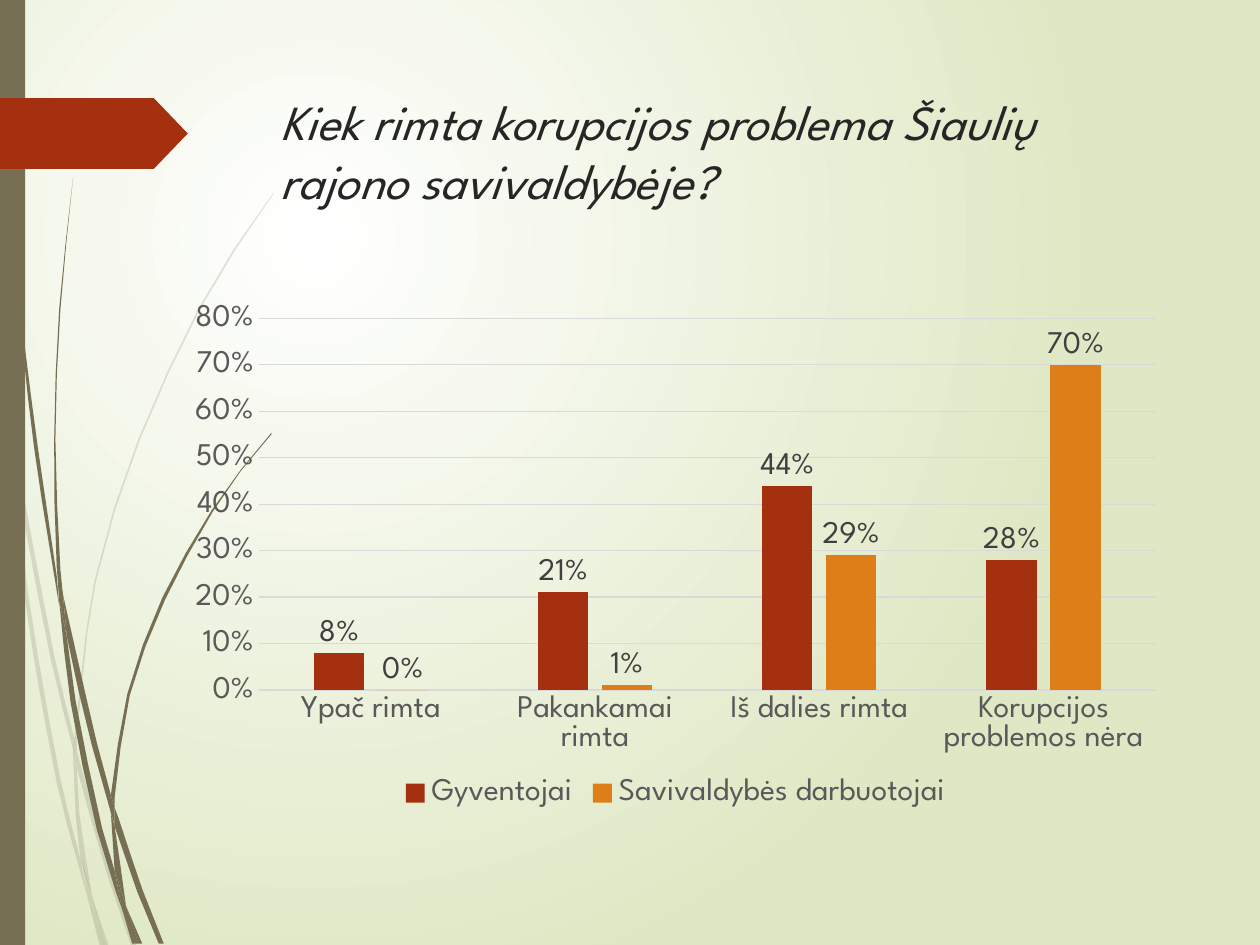
from math import ceil, dist

from lxml import etree
from pptx import Presentation
from pptx.chart.data import CategoryChartData
from pptx.dml.color import RGBColor
from pptx.enum.chart import XL_CHART_TYPE, XL_LABEL_POSITION, XL_LEGEND_POSITION, XL_TICK_MARK
from pptx.enum.shapes import MSO_SHAPE
from pptx.enum.text import MSO_ANCHOR, PP_ALIGN
from pptx.oxml.ns import qn
from pptx.util import Pt

COLUMN, LEGEND_BOTTOM = XL_CHART_TYPE.COLUMN_CLUSTERED, XL_LEGEND_POSITION.BOTTOM
NO_TICK, OUTSIDE_END = XL_TICK_MARK.NONE, XL_LABEL_POSITION.OUTSIDE_END
RECTANGLE, PENTAGON = MSO_SHAPE.RECTANGLE, MSO_SHAPE.PENTAGON
TOP, LEFT = MSO_ANCHOR.TOP, PP_ALIGN.LEFT

PX = 9144  # 100 px to the inch
CURVE_STEP = 60
FONT = "League Spartan"
WHITE = RGBColor(0xFF, 0xFF, 0xFF)
PALE_GREEN = RGBColor(0xDF, 0xE8, 0xC4)
OLIVE = RGBColor(0x76, 0x6F, 0x54)
RED = RGBColor(0xA5, 0x30, 0x10)
ORANGE = RGBColor(0xDE, 0x7E, 0x18)
TITLE_GREY = RGBColor(0x26, 0x26, 0x26)
LABEL_GREY = RGBColor(0x40, 0x40, 0x40)
AXIS_GREY = RGBColor(0x59, 0x59, 0x59)
LINE_GREY = RGBColor(0xD9, 0xD9, 0xD9)

TITLE = "Kiek rimta korupcijos problema Šiaulių rajono savivaldybėje?"
CATEGORIES = ["Ypač rimta", "Pakankamai rimta", "Iš dalies rimta", "Korupcijos problemos nėra"]
SERIES = [
    ("Gyventojai", [0.08, 0.21, 0.44, 0.28], RED),
    ("Savivaldybės darbuotojai", [0, 0.01, 0.29, 0.70], ORANGE),
]

# Each grass blade is a left and a right edge, in px from top to bottom.
PALE_BLADES = [
    ([(0, 282), (6, 322), (8, 350)], [(0, 299), (7, 344), (8, 350)]),
    ([(10, 345), (43, 520), (59, 586)], [(12, 376), (40, 522), (59, 599)]),
    ([(61, 596), (64, 607), (88, 692), (108, 750)], [(61, 610), (85, 694), (104, 750)]),
    ([(73, 711), (83, 750)], [(73, 711), (86, 750)]),
    ([(8, 350), (19, 470), (45, 621), (64, 693), (70, 714)],
     [(8, 350), (12, 376), (22, 469), (48, 619), (64, 683), (70, 714)]),
    ([(58, 599), (60, 646), (64, 683), (73, 711)],
     [(58, 599), (61, 610), (63, 646), (73, 711)]),
    ([(217, 153), (186, 197), (158, 244), (110, 348), (75, 461), (59, 586)],
     [(217, 154), (187, 198), (159, 245), (111, 349), (76, 462), (61, 584), (61, 596)]),
    ([(70, 714), (79, 750)], [(70, 714), (82, 750)]),
    ([(59, 586), (58, 599), (61, 608)], [(59, 586), (61, 596), (61, 610)]),
    ([(65, 683), (70, 714), (82, 750)], [(65, 683), (73, 711), (83, 750)]),
]
DARK_BLADES = [
    ([(2, 0), (5, 110), (14, 233), (27, 355), (47, 481)],
     [(3, 0), (6, 109), (15, 232), (30, 355), (45, 457), (47, 481)]),
    ([(50, 472), (53, 505), (73, 592), (88, 645)], [(50, 472), (77, 590), (88, 631), (88, 645)]),
    ([(91, 641), (91, 656), (109, 708), (126, 749)], [(91, 641), (94, 649), (113, 706), (130, 749)]),
    ([(47, 477), (56, 557), (77, 659), (92, 708), (97, 722)],
     [(47, 477), (53, 505), (60, 556), (81, 657), (91, 691), (97, 722)]),
    ([(58, 141), (47, 245), (43, 349), (45, 449), (49, 472)],
     [(58, 141), (48, 245), (44, 349), (48, 453), (50, 472)]),
    ([(100, 719), (110, 749)], [(100, 719), (113, 749)]),
    ([(45, 449), (47, 477), (53, 505)], [(45, 449), (50, 472), (53, 505)]),
    ([(215, 344), (191, 373), (168, 405), (129, 474), (101, 551), (88, 631)],
     [(216, 344), (191, 374), (169, 406), (131, 476), (103, 552), (91, 633), (91, 641)]),
    ([(97, 722), (105, 749)], [(97, 722), (108, 749)]),
    ([(88, 645), (91, 691), (100, 719)], [(88, 645), (91, 656), (100, 719)]),
    ([(88, 631), (88, 645), (90, 651)], [(88, 631), (91, 641), (91, 656)]),
    ([(91, 691), (97, 722), (108, 749)], [(91, 691), (100, 719), (110, 749)]),
]


def smooth(points):
    """Return points along a Hermite curve through the given points."""
    slopes = []
    for i in range(len(points)):
        near = points[max(i - 1, 0):i + 2]
        length = sum(dist(a, b) for a, b in zip(near, near[1:]))
        slopes.append([(end - start) / length for start, end in zip(near[0], near[-1])])
    curve = [points[0]]
    for i, (start, end) in enumerate(zip(points, points[1:])):
        length = dist(start, end)
        steps = ceil(length / CURVE_STEP)
        for step in range(1, steps + 1):
            t = step / steps
            rise = t * t * (3 - 2 * t)
            leave, arrive = t * (1 - t) ** 2 * length, t * t * (t - 1) * length
            curve.append(tuple(
                (1 - rise) * start[k] + rise * end[k] + leave * slopes[i][k] + arrive * slopes[i + 1][k]
                for k in (0, 1)))
    return curve


def paint(shape, color, opacity=100):
    shape.shadow.inherit = False
    shape.fill.solid()
    shape.fill.fore_color.rgb = color
    shape.line.fill.background()
    if opacity < 100:
        rgb = shape._element.spPr.find(".//" + qn("a:srgbClr"))
        etree.SubElement(rgb, qn("a:alpha"), val=str(opacity * 1000))


def add_blade(slide, left_edge, right_edge, opacity):
    outline = [(round(x * PX), round(y * PX)) for x, y in smooth(left_edge) + smooth(right_edge)[::-1]]
    builder = slide.shapes.build_freeform(*outline[0], scale=1.0)
    builder.add_line_segments(outline[1:], close=True)
    paint(builder.convert_to_shape(), OLIVE, opacity)


def add_preset(slide, kind, box, color):
    shape = slide.shapes.add_shape(kind, *(n * PX for n in box))
    paint(shape, color)
    return shape


def set_background(slide):
    fill = slide.background.fill
    fill.gradient()
    for stop, color, position in zip(fill.gradient_stops, (WHITE, PALE_GREEN), (0, 1)):
        stop.color.rgb = color
        stop.position = position
    gradient = slide.element.find(".//" + qn("a:gradFill"))
    gradient.remove(gradient.find(qn("a:lin")))
    circle = etree.SubElement(gradient, qn("a:path"), path="circle")
    etree.SubElement(circle, qn("a:fillToRect"), l="50000", t="50000", r="100000", b="100000")


def set_title(slide):
    title = slide.shapes.title
    title.left, title.top, title.width, title.height = (n * PX for n in (213, 68, 721, 140))
    frame = title.text_frame
    frame.word_wrap = True
    frame.vertical_anchor = TOP
    paragraph = frame.paragraphs[0]
    paragraph.alignment = LEFT
    run = paragraph.add_run()
    run.text = TITLE
    style_font(run.font, TITLE_GREY, 28)
    run.font.italic = True


def style_font(font, color, size=18):
    font.name, font.size = FONT, Pt(size)
    font.color.rgb = color


def style_line(line):
    line.color.rgb = LINE_GREY
    line.width = Pt(0.75)


def add_bar_chart(slide):
    data = CategoryChartData(number_format="0%")
    data.categories = CATEGORIES
    for name, values, _ in SERIES:
        data.add_series(name, values)
    chart = slide.shapes.add_chart(COLUMN, *(n * PX for n in (139, 233, 794, 413)), data).chart
    style_font(chart.font, AXIS_GREY)
    chart.has_title = False
    chart.has_legend = True
    chart.legend.position = LEGEND_BOTTOM
    chart.legend.include_in_layout = False
    style_font(chart.legend.font, AXIS_GREY)

    for axis in (chart.category_axis, chart.value_axis):
        axis.major_tick_mark = axis.minor_tick_mark = NO_TICK
        style_font(axis.tick_labels.font, AXIS_GREY)
    style_line(chart.category_axis.format.line)
    values_axis = chart.value_axis
    values_axis.minimum_scale, values_axis.maximum_scale, values_axis.major_unit = 0, 0.8, 0.1
    values_axis.tick_labels.number_format = "0%"
    values_axis.tick_labels.number_format_is_linked = False
    values_axis.format.line.fill.background()
    style_line(values_axis.major_gridlines.format.line)

    plot = chart.plots[0]
    plot.gap_width, plot.overlap, plot.vary_by_categories = 219, -27, False
    for series, (_, _, color) in zip(plot.series, SERIES):
        series.format.fill.solid()
        series.format.fill.fore_color.rgb = color
        labels = series.data_labels
        labels.show_value = True
        labels.position = OUTSIDE_END
        labels.number_format, labels.number_format_is_linked = "0%", False
        style_font(labels.font, LABEL_GREY)


def main():
    presentation = Presentation()
    presentation.slide_width, presentation.slide_height = 1000 * PX, 750 * PX
    slide = presentation.slides.add_slide(presentation.slide_layouts[5])
    set_background(slide)
    for blades, opacity in ((PALE_BLADES, 20), (DARK_BLADES, 100)):
        for left_edge, right_edge in blades:
            add_blade(slide, left_edge, right_edge, opacity)
    add_preset(slide, RECTANGLE, (0, 0, 20, 750), OLIVE)
    arrow = add_preset(slide, PENTAGON, (0, 78, 149, 56), RED)
    arrow.adjustments[0] = 0.48
    set_title(slide)
    add_bar_chart(slide)
    presentation.save("out.pptx")


if __name__ == "__main__":
    main()
